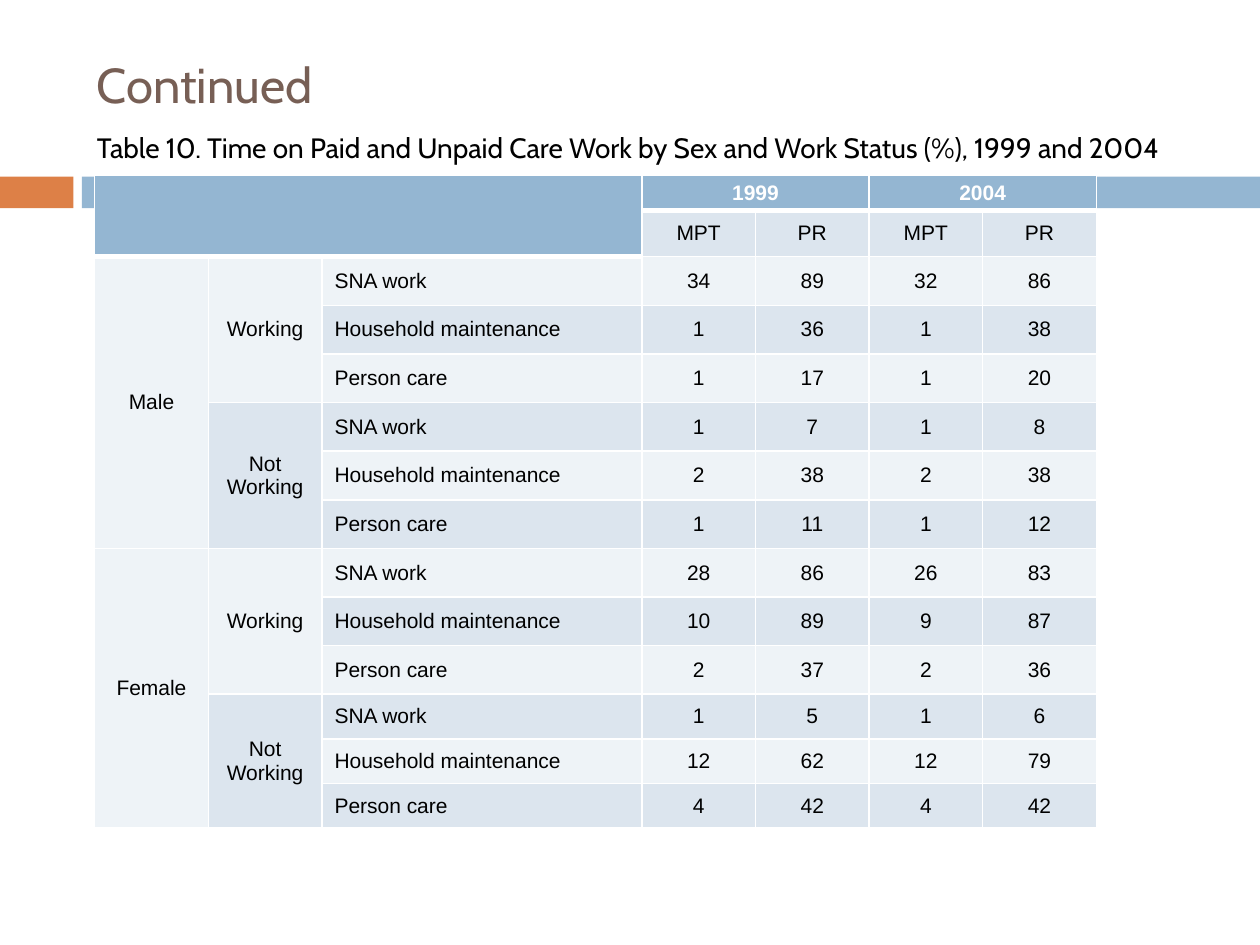
from dataclasses import dataclass

from lxml.etree import SubElement
from pptx import Presentation
from pptx.dml.color import RGBColor
from pptx.enum.shapes import MSO_SHAPE
from pptx.enum.text import MSO_ANCHOR, MSO_AUTO_SIZE, PP_ALIGN
from pptx.oxml.ns import qn
from pptx.util import Cm, Pt

WHITE = RGBColor(0xFF, 0xFF, 0xFF)
BLACK = RGBColor(0x00, 0x00, 0x00)
BROWN = RGBColor(0x77, 0x5F, 0x55)
ORANGE = RGBColor(0xDD, 0x80, 0x47)
BLUE = RGBColor(0x94, 0xB6, 0xD2)
PALE = RGBColor(0xEE, 0xF3, 0xF7)
TINT = RGBColor(0xDC, 0xE5, 0xEE)

SLIDE_WIDTH = 25.4
COLUMN_WIDTHS = [2.29, 2.29, 6.45] + [2.29] * 4
ROW_HEIGHTS = [0.7, 0.76] + [0.98] * 9 + [0.9] * 3
HEADER_ROWS = 2
LABEL_COLUMNS = 3
ACTIVITIES = ["SNA work", "Household maintenance", "Person care"]


@dataclass
class Bar:
    left: float
    width: float
    color: RGBColor


@dataclass
class Group:
    """One work status, with MPT and PR of 1999 and 2004 per activity."""
    status: str
    values: list[list[int]]


BARS = [Bar(0, 1.48, ORANGE), Bar(1.65, SLIDE_WIDTH - 1.65, BLUE)]
GROUPS_BY_SEX = {
    "Male": [
        Group("Working", [[34, 89, 32, 86], [1, 36, 1, 38], [1, 17, 1, 20]]),
        Group("Not\nWorking", [[1, 7, 1, 8], [2, 38, 2, 38], [1, 11, 1, 12]]),
    ],
    "Female": [
        Group("Working", [[28, 86, 26, 83], [10, 89, 9, 87], [2, 37, 2, 36]]),
        Group("Not\nWorking", [[1, 5, 1, 6], [12, 62, 12, 79], [4, 42, 4, 42]]),
    ],
}


def add_run(para, text: str, size: int, font: str, color: RGBColor, bold: bool = False) -> None:
    span = para.add_run()
    span.text = text
    span.font.size = Pt(size)
    span.font.name = font
    span.font.bold = bold
    span.font.color.rgb = color


def draw_bar(page, bar: Bar, depth: int) -> None:
    box = page.shapes.add_shape(MSO_SHAPE.RECTANGLE, Cm(bar.left), Cm(3.56), Cm(bar.width), Cm(0.64))
    box.shadow.inherit = False
    box.fill.solid()
    box.fill.fore_color.rgb = bar.color
    box.line.fill.background()
    page.shapes._spTree.insert(2 + depth, box._element)


def fill_placeholder(box, top: float, height: float, text: str, size: int, color: RGBColor,
                     anchor: MSO_ANCHOR):
    box.left, box.top, box.width, box.height = Cm(1.7), Cm(top), Cm(22.66), Cm(height)
    frame = box.text_frame
    frame.word_wrap = True
    frame.auto_size = MSO_AUTO_SIZE.NONE
    frame.vertical_anchor = anchor
    para = frame.paragraphs[0]
    para.alignment = PP_ALIGN.LEFT
    add_run(para, text, size, "Cabin", color)
    return para


def set_borders(cell, top: float, bottom: float) -> None:
    properties = cell._tc.get_or_add_tcPr()
    for side, width in (("L", 1), ("R", 1), ("T", top), ("B", bottom)):
        line = SubElement(properties, qn(f"a:ln{side}"), w=str(Pt(width)))
        SubElement(SubElement(line, qn("a:solidFill")), qn("a:srgbClr"), val=str(WHITE))


def format_cell(cell, row: int, column: int) -> None:
    header_end = HEADER_ROWS - 1 if column < LABEL_COLUMNS else 0
    set_borders(cell, 3 if row == header_end + 1 else 1, 3 if row in (0, header_end) else 1)
    cell.fill.solid()
    if row <= header_end:
        cell.fill.fore_color.rgb = BLUE
    elif column == 0:
        cell.fill.fore_color.rgb = PALE
    else:
        cell.fill.fore_color.rgb = TINT if row % 2 else PALE
    cell.margin_top = cell.margin_bottom = Cm(0.08)
    cell.vertical_anchor = MSO_ANCHOR.MIDDLE


def write_cell(cell, text: str, color: RGBColor = BLACK, bold: bool = False,
               alignment: PP_ALIGN = PP_ALIGN.CENTER) -> None:
    frame = cell.text_frame
    for index, line in enumerate(text.split("\n")):
        para = frame.add_paragraph() if index else frame.paragraphs[0]
        para.alignment = alignment
        add_run(para, line, 12, "Arial", color, bold)


def write_header(table) -> None:
    table.cell(0, 0).merge(table.cell(HEADER_ROWS - 1, LABEL_COLUMNS - 1))
    for index, year in enumerate(["1999", "2004"]):
        column = LABEL_COLUMNS + 2 * index
        table.cell(0, column).merge(table.cell(0, column + 1))
        write_cell(table.cell(0, column), year, WHITE, bold=True)
        for offset, measure in enumerate(["MPT", "PR"]):
            write_cell(table.cell(1, column + offset), measure)


def write_body(table) -> None:
    row = HEADER_ROWS
    for sex, groups in GROUPS_BY_SEX.items():
        table.cell(row, 0).merge(table.cell(row + len(groups) * len(ACTIVITIES) - 1, 0))
        write_cell(table.cell(row, 0), sex)
        for group in groups:
            table.cell(row, 1).merge(table.cell(row + len(ACTIVITIES) - 1, 1))
            write_cell(table.cell(row, 1), group.status)
            for activity, values in zip(ACTIVITIES, group.values):
                write_cell(table.cell(row, 2), activity, alignment=PP_ALIGN.LEFT)
                for column, value in enumerate(values, LABEL_COLUMNS):
                    write_cell(table.cell(row, column), str(value))
                row += 1


def draw_table(page) -> None:
    table = page.shapes.add_table(
        len(ROW_HEIGHTS), len(COLUMN_WIDTHS), Cm(1.91), Cm(3.54),
        Cm(sum(COLUMN_WIDTHS)), Cm(sum(ROW_HEIGHTS))).table
    for column, width in zip(table.columns, COLUMN_WIDTHS):
        column.width = Cm(width)
    for row, height in zip(table.rows, ROW_HEIGHTS):
        row.height = Cm(height)
    for row in range(len(ROW_HEIGHTS)):
        for column in range(len(COLUMN_WIDTHS)):
            format_cell(table.cell(row, column), row, column)
    write_header(table)
    write_body(table)


def main() -> None:
    deck = Presentation()
    deck.slide_width, deck.slide_height = Cm(SLIDE_WIDTH), Cm(19.05)
    page = deck.slides.add_slide(deck.slide_layouts[1])
    for depth, bar in enumerate(BARS):
        draw_bar(page, bar, depth)
    fill_placeholder(page.shapes.title, 0.33, 2.74, "Continued", 28, BROWN, MSO_ANCHOR.MIDDLE)
    caption = fill_placeholder(
        page.placeholders[1], 2.51, 12.5,
        "Table 10. Time on Paid and Unpaid Care Work by Sex and Work Status (%), 1999 and 2004",
        16, BLACK, MSO_ANCHOR.TOP)
    caption.space_before = Pt(7)
    properties = caption._p.get_or_add_pPr()
    properties.set("marL", str(Cm(0.89)))
    properties.set("indent", str(Cm(-0.89)))
    SubElement(properties, qn("a:buNone"))
    draw_table(page)
    deck.save("out.pptx")


if __name__ == "__main__":
    main()
